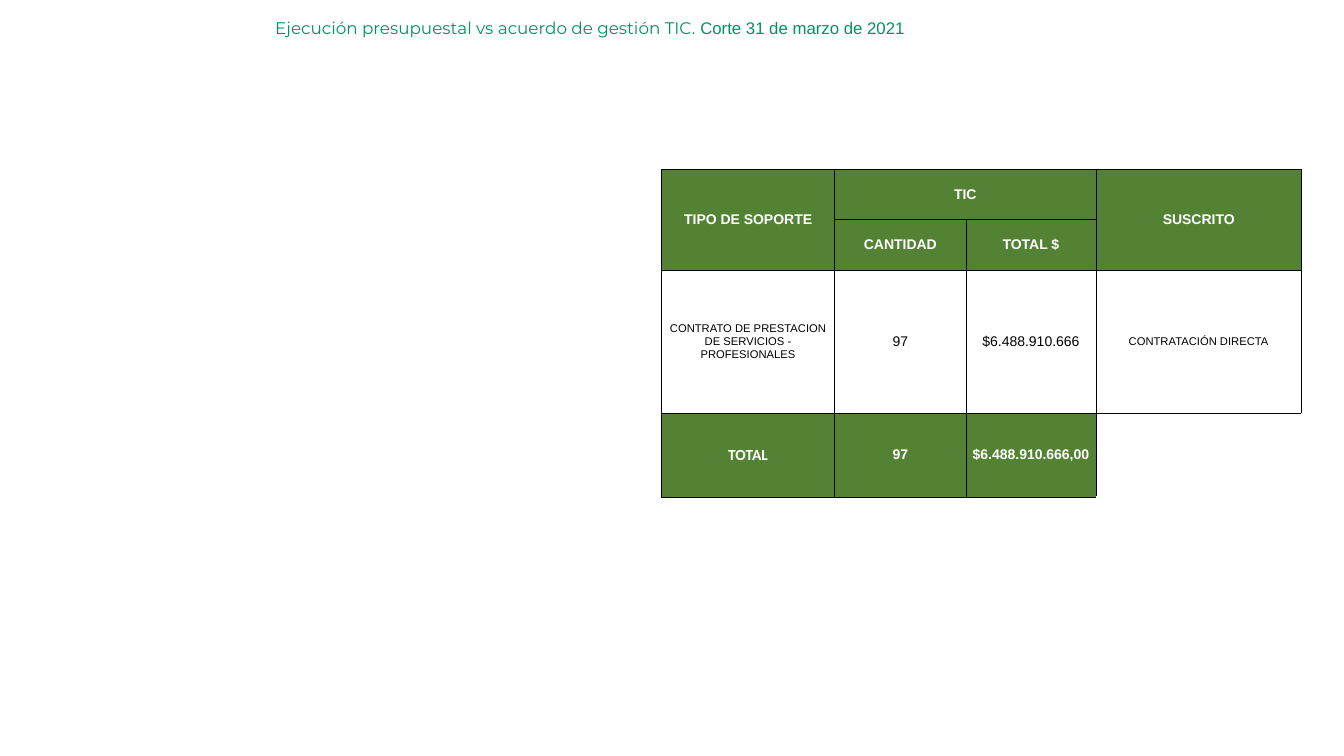
from lxml.etree import SubElement
from pptx import Presentation
from pptx.dml.color import RGBColor
from pptx.enum.text import MSO_ANCHOR, MSO_AUTO_SIZE, PP_ALIGN
from pptx.oxml.ns import qn
from pptx.util import Inches, Pt

GREEN = "548235"
WHITE = "FFFFFF"
BLACK = "000000"
TEAL = "009267"
COLS = [1.72, 1.3, 1.29, 2.04]
ROWS = [0.5, 0.5, 1.42, 0.83]
HEAD = dict(color=WHITE, bold=True)
SMALL = dict(size=8)
CELLS = [
    (0, 0, "TIPO DE SOPORTE", GREEN, HEAD),
    (0, 1, "TIC", GREEN, HEAD),
    (0, 3, "SUSCRITO", GREEN, HEAD),
    (1, 1, "CANTIDAD", GREEN, HEAD),
    (1, 2, "TOTAL $", GREEN, HEAD),
    (2, 0, "CONTRATO DE PRESTACION DE SERVICIOS - PROFESIONALES", WHITE, SMALL),
    (2, 1, "97", None, {}),
    (2, 2, "$6.488.910.666", None, {}),
    (2, 3, "CONTRATACIÓN DIRECTA", WHITE, SMALL),
    (3, 0, "TOTAL", GREEN, dict(HEAD, size=11, font="Calibri")),
    (3, 1, "97", GREEN, HEAD),
    (3, 2, "$6.488.910.666,00", GREEN, HEAD),
]
MERGES = [(0, 0, 1, 0), (0, 1, 0, 2), (0, 3, 1, 3)]


def rgb(code):
    return RGBColor.from_string(code)


def write(para, text, size=10, font="Arial", color=BLACK, bold=False, align=PP_ALIGN.CENTER):
    para.alignment = align
    run = para.add_run()
    run.text = text
    run.font.size = Pt(size)
    run.font.name = font
    run.font.bold = bold
    run.font.color.rgb = rgb(color)


def border(cell, sides):
    props = cell._tc.get_or_add_tcPr()
    for side in sides:
        line = SubElement(props, qn(f"a:ln{side}"), w=str(Pt(0.5)))
        fill = SubElement(line, qn("a:solidFill"))
        SubElement(fill, qn("a:srgbClr"), val=BLACK)


def add_title(slide):
    title = slide.shapes.title
    title.left, title.top = Inches(2.63), Inches(0.13)
    title.width, title.height = Inches(10.7), Inches(0.3)
    frame = title.text_frame
    frame.word_wrap = True
    frame.auto_size = MSO_AUTO_SIZE.SHAPE_TO_FIT_TEXT
    frame.vertical_anchor = MSO_ANCHOR.TOP
    para = frame.paragraphs[0]
    style = dict(size=12, color=TEAL, align=PP_ALIGN.LEFT)
    write(para, "Ejecución presupuestal vs acuerdo de gestión TIC. ", font="Montserrat", **style)
    write(para, "Corte 31 de marzo de 2021", **style)


def add_grid(slide):
    frame = slide.shapes.add_table(
        len(ROWS), len(COLS), Inches(6.56), Inches(1.68),
        Inches(sum(COLS)), Inches(sum(ROWS)))
    table = frame.table
    table.first_row = table.horz_banding = False
    for col, width in zip(table.columns, COLS):
        col.width = Inches(width)
    for row, height in zip(table.rows, ROWS):
        row.height = Inches(height)
    blank = table.cell(3, 3)
    for cell in table.iter_cells():
        cell.margin_left = cell.margin_right = 0
        cell.margin_top = cell.margin_bottom = 0
        cell.vertical_anchor = MSO_ANCHOR.MIDDLE
        border(cell, "LT" if cell == blank else "LRTB")
        cell.fill.background()
    for top, left, bottom, right in MERGES:
        table.cell(top, left).merge(table.cell(bottom, right))
    for row, col, text, fill, style in CELLS:
        cell = table.cell(row, col)
        if fill:
            cell.fill.solid()
            cell.fill.fore_color.rgb = rgb(fill)
        write(cell.text_frame.paragraphs[0], text, **style)


def main():
    deck = Presentation()
    deck.slide_width, deck.slide_height = Inches(13.33), Inches(7.5)
    slide = deck.slides.add_slide(deck.slide_layouts[5])
    add_title(slide)
    add_grid(slide)
    deck.save("out.pptx")


if __name__ == "__main__":
    main()
